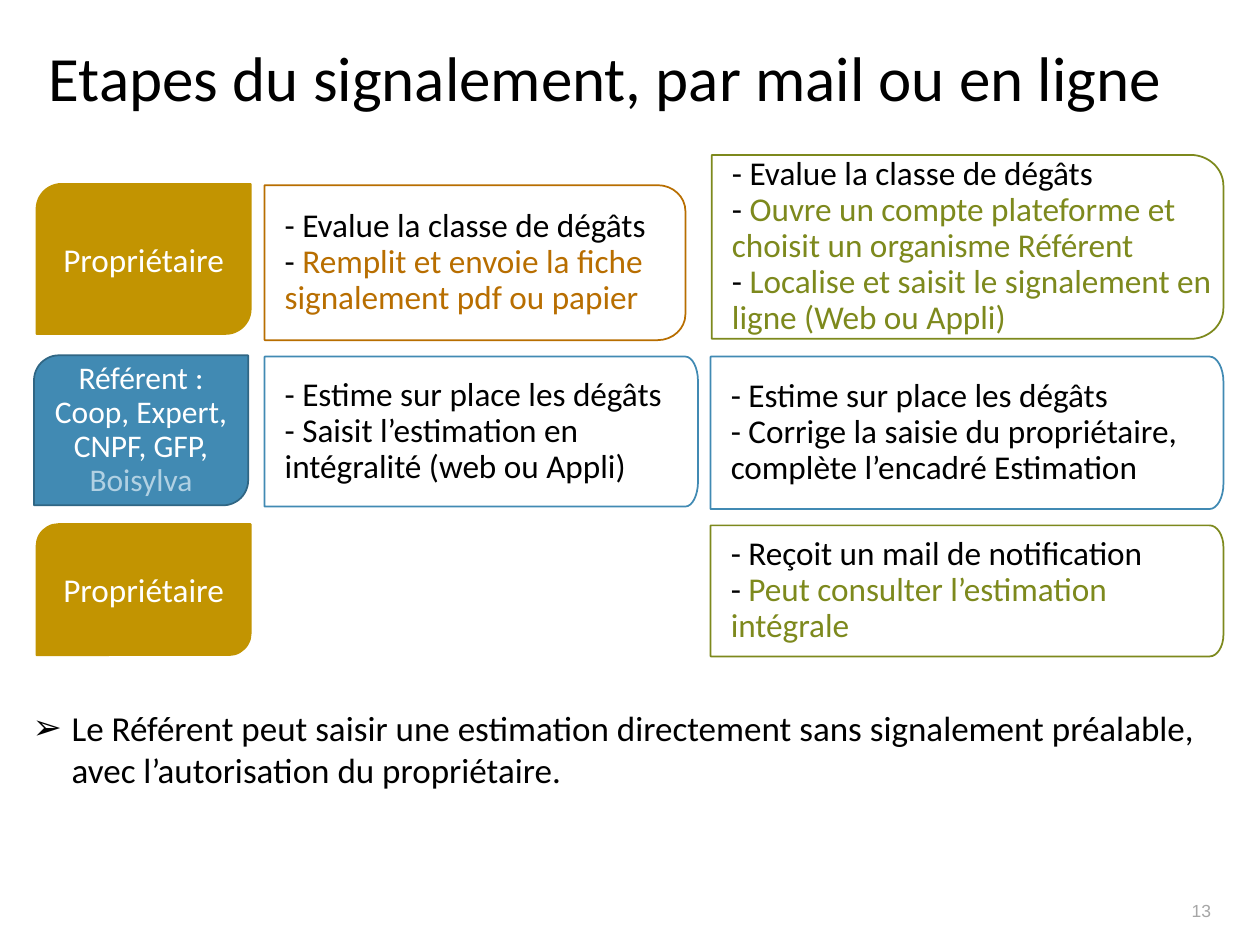
import pptx
import pptx.util
import pptx.dml.color
import pptx.enum.shapes
import pptx.enum.text
import pptx.oxml
import pptx.oxml.ns
from lxml import etree

THEME = {
    "font": "Calibri", "number_font": "Arial",
    "black": "000000", "white": "FFFFFF", "gray": "A6A6A6",
    "gold": "C29401", "orange": "B86E00", "green": "7D891D",
    "blue": "418AB3", "navy": "306684", "pale": "B1D1E3",
    "title": 36, "step": 19, "referent": 18, "note": 20, "number": 10,
}
SLIDE = (10, 7.5)
ALIGN = pptx.enum.text.PP_ALIGN
ANCHOR = pptx.enum.text.MSO_ANCHOR
qn = pptx.oxml.ns.qn

COLS = {"role": (0.29, 1.7), "mail": (2.1, 3.34), "online": (5.64, 4.07)}
ROWS = [(1.47, 1.23), (2.83, 1.19), (4.17, 1.04)]

TITLE = "Etapes du signalement, par mail ou en ligne"
NOTE = ("Le Référent peut saisir une estimation directement sans signalement "
        "préalable, avec l’autorisation du propriétaire.")
NUMBER = "13"

OWNER = [("Propriétaire", "white")]
REFERENT = [("Référent : Coop, Expert, CNPF, GFP, ", "white"), ("Boisylva", "pale")]
# row, runs, fill, line, size, line spacing, left shift, height
ROLES = [
    (0, OWNER, "gold", "gold", "step", 1, 0, 1.19),
    (1, REFERENT, "blue", "navy", "referent", 0.9, -0.02, 1.19),
    (2, OWNER, "gold", "gold", "step", 1, 0, 1.04),
]

EVALUATE = [("- Evalue la classe de dégâts", "black")]
ESTIMATE = [("- Estime sur place les dégâts", "black")]


def accent(text, color):
    return [("- ", "black"), (text, color)]


# column, row, line, corner width, change of (left, top, width, height), paragraphs
STEPS = [
    ("mail", 0, "orange", 0.22, (0, 0, 0, 0), [
        EVALUATE,
        accent("Remplit et envoie la fiche signalement pdf ou papier", "orange")]),
    ("mail", 1, "blue", 0.1, (0, 0, 0.1, 0), [
        ESTIMATE,
        [("- Saisit l’estimation en intégralité (web ou Appli)", "black")]]),
    ("online", 0, "green", 0.26, (0.01, -0.24, -0.01, 0.23), [
        EVALUATE,
        accent("Ouvre un compte plateforme et choisit un organisme Référent", "green"),
        accent("Localise et saisit le signalement en ligne (Web ou Appli)", "green")]),
    ("online", 1, "blue", 0.11, (0, 0, 0, 0.02), [
        ESTIMATE,
        [("- Corrige la saisie du propriétaire, complète l’encadré Estimation", "black")]]),
    ("online", 2, "green", 0.11, (0, 0, 0, 0), [
        [("- Reçoit un mail de notification", "black")],
        accent("Peut consulter l’estimation intégrale", "green")]),
]


def inch(*values):
    return [pptx.util.Inches(v) for v in values]


def rgb(name):
    return pptx.dml.color.RGBColor.from_string(THEME[name])


def write(sp, paragraphs, size, align=ALIGN.LEFT, anchor=ANCHOR.MIDDLE,
          spacing=1, font="font"):
    tf = sp.text_frame
    tf.word_wrap = True
    tf.vertical_anchor = anchor
    for i, runs in enumerate(paragraphs):
        p = tf.add_paragraph() if i else tf.paragraphs[0]
        p.alignment = align
        p.line_spacing = spacing
        for text, color in runs:
            r = p.add_run()
            r.text = text
            r.font.name = THEME[font]
            r.font.size = pptx.util.Pt(THEME[size])
            r.font.color.rgb = rgb(color)
    return tf


def paint(sp, fill, line):
    sp.shadow.inherit = False
    sp.fill.solid()
    sp.fill.fore_color.rgb = rgb(fill)
    sp.line.color.rgb = rgb(line)
    sp.line.width = pptx.util.Pt(1)


def bend(segment, start, corner, end):
    curve = etree.Element(qn("a:cubicBezTo"))
    controls = [[a + 0.55 * (c - a) for a, c in zip(pt, corner)] for pt in (start, end)]
    for px, py in (*controls, end):
        etree.SubElement(curve, qn("a:pt"), x=str(round(px)), y=str(round(py)))
    segment.getparent().replace(segment, curve)


def round_right(s, x, y, w, h, rx):
    x, y, w, h, rx = inch(x, y, w, h, rx)
    ry = h // 6
    points = [(w, ry), (w, h - ry), (w - rx, h), (0, h), (0, 0), (w - rx, 0), (w, ry)]
    placed = [(x + px, y + py) for px, py in points]
    builder = s.shapes.build_freeform(*placed[0], scale=1.0)
    builder.add_line_segments(placed[1:], close=True)
    sp = builder.convert_to_shape()
    segments = list(sp._element.iter(qn("a:lnTo")))
    bend(segments[1], points[1], (w, h), points[2])
    bend(segments[5], points[5], (w, 0), points[6])
    return sp


def add_step(s, col, row, line, rx, change, paragraphs):
    (x, w), (y, h) = COLS[col], ROWS[row]
    box = [a + b for a, b in zip((x, y, w, h), change)]
    sp = round_right(s, *box, rx)
    paint(sp, "white", line)
    color = sp._element.spPr.find(qn("a:solidFill")).find(qn("a:srgbClr"))
    etree.SubElement(color, qn("a:alpha"), val="90000")
    tf = write(sp, paragraphs, "step", spacing=0.9)
    tf.margin_left, tf.margin_top, tf.margin_right, tf.margin_bottom = inch(
        0.16, 0.07, 0.07, 0.07)


def add_role(s, row, runs, fill, line, size, spacing, shift, height):
    x, w = COLS["role"]
    sp = s.shapes.add_shape(pptx.enum.shapes.MSO_SHAPE.ROUND_2_DIAG_RECTANGLE,
                            *inch(x + shift, ROWS[row][0] - 0.01, w, height))
    paint(sp, fill, line)
    write(sp, [runs], size, ALIGN.CENTER, spacing=spacing)


def main():
    prs = pptx.Presentation()
    prs.slide_width, prs.slide_height = inch(*SLIDE)
    s = prs.slides.add_slide(prs.slide_layouts[6])

    write(s.shapes.add_textbox(*inch(0.29, 0.28, 9.31, 0.73)),
          [[(TITLE, "black")]], "title", spacing=0.9)
    for step in STEPS:
        add_step(s, *step)
    for role in ROLES:
        add_role(s, *role)

    sp = s.shapes.add_textbox(*inch(0.16, 5.56, 9.68, 0.77))
    tf = write(sp, [[(NOTE, "black")]], "note", anchor=ANCHOR.TOP)
    pPr = tf.paragraphs[0]._p.get_or_add_pPr()
    indent = pptx.util.Inches(0.31)
    pPr.set("marL", str(indent))
    pPr.set("indent", str(-indent))
    etree.SubElement(pPr, qn("a:buFont"), typeface=THEME["number_font"])
    etree.SubElement(pPr, qn("a:buChar"), char="➢")

    write(s.shapes.add_textbox(*inch(9.05, 7.05, 0.66, 0.31)),
          [[(NUMBER, "gray")]], "number", ALIGN.RIGHT, ANCHOR.BOTTOM,
          font="number_font")
    prs.save("out.pptx")


if __name__ == "__main__":
    main()
